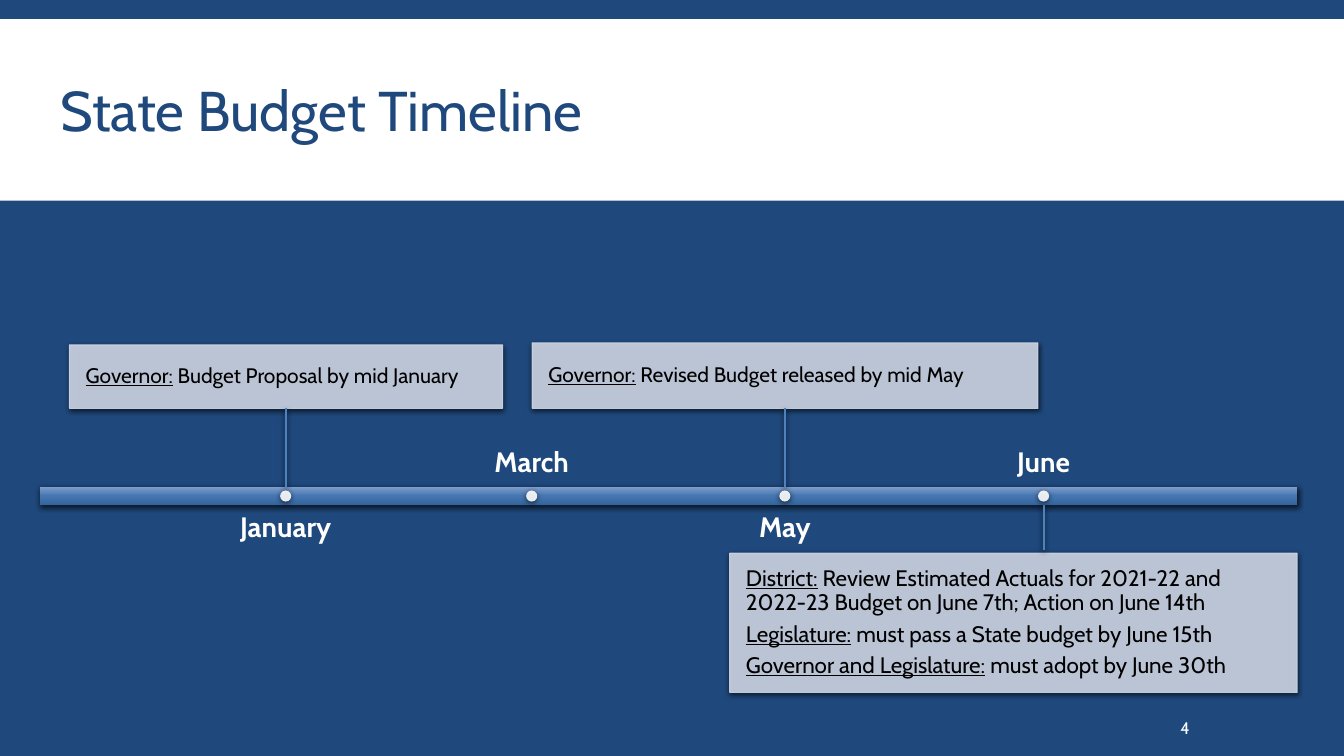
from copy import deepcopy

from lxml import etree
from pptx import Presentation
from pptx import util as u
from pptx.dml.color import RGBColor
from pptx.enum import shapes, text
from pptx.oxml.ns import qn

Cm, Pt = u.Cm, u.Pt
ANCHOR, ALIGN = text.MSO_ANCHOR, text.PP_ALIGN

NAVY = RGBColor(0x1F, 0x49, 0x7D)
WHITE = RGBColor(0xFF, 0xFF, 0xFF)
BLACK = RGBColor(0, 0, 0)
CARD = RGBColor(0xCF, 0xD7, 0xE7)
STEM = RGBColor(0x4F, 0x81, 0xBD)
BAR_COLORS = [RGBColor(0x7F, 0x9E, 0xCC), RGBColor(0x45, 0x76, 0xB1),
              RGBColor(0x34, 0x65, 0x9D)]
FONT = "Cabin"

# Content: lengths in cm
TITLE = "State Budget Timeline"
PAGE = "4"
MONTHS = [  # name, centre x, label above the bar
    ("January", 7.2, False),
    ("March", 13.4, True),
    ("May", 19.78, False),
    ("June", 26.3, True),
]
CARDS = [  # month, left, top, width, height, text size, (who, what) lines
    ("January", 1.75, 8.69, 10.92, 1.6, 15,
     [("Governor:", " Budget Proposal by mid January")]),
    ("May", 13.41, 8.64, 12.75, 1.65, 15,
     [("Governor:", " Revised Budget released by mid May")]),
    ("June", 18.39, 13.94, 14.3, 3.51, 16,
     [("District:", " Review Estimated Actuals for 2021-22 and "
       "2022-23 Budget on June 7th; Action on June 14th"),
      ("Legislature:", " must pass a State budget by June 15th"),
      ("Governor and Legislature:", " must adopt by June 30th")]),
]
BAR_LEFT, BAR_MID, BAR_W, BAR_H = 1, 12.5, 31.7, 0.46
BAR_TOP, BAR_BOTTOM = BAR_MID - BAR_H / 2, BAR_MID + BAR_H / 2
DOT, LABEL_W, LABEL_H, LABEL_GAP = 0.28, 9.93, 1.3, 0.2
STEM_GAP = 0.07

prs = Presentation()
prs.slide_width, prs.slide_height = Cm(33.87), Cm(19.05)
s = prs.slides.add_slide(prs.slide_layouts[6])
s.background.fill.solid()
s.background.fill.fore_color.rgb = NAVY


def box(kind, left, top, width, height, color=None):
    sp = s.shapes.add_shape(kind, Cm(left), Cm(top), Cm(width), Cm(height))
    sp.shadow.inherit = False
    sp.line.fill.background()
    if color is not None:
        sp.fill.solid()
        sp.fill.fore_color.rgb = color
    return sp


def translucent(sp):
    for clr in sp._element.spPr.iter(qn("a:srgbClr")):
        etree.SubElement(clr, qn("a:alpha"), val="90000")


def add_shadow(sp):
    spPr = sp._element.spPr
    effects = spPr.find(qn("a:effectLst"))
    if effects is None:
        effects = etree.SubElement(spPr, qn("a:effectLst"))
    shadow = etree.SubElement(effects, qn("a:outerShdw"), blurRad=str(Pt(4)),
                              dist=str(Pt(1.2)), dir="5400000", rotWithShape="0")
    clr = etree.SubElement(shadow, qn("a:srgbClr"), val="000000")
    etree.SubElement(clr, qn("a:alpha"), val="68000")


def set_frame(sp, anchor, margin_x, margin_y):
    tf = sp.text_frame
    tf.word_wrap = True
    tf.vertical_anchor = anchor
    tf.margin_left = tf.margin_right = Cm(margin_x)
    tf.margin_top = tf.margin_bottom = Cm(margin_y)
    return tf


def add_run(p, words, size, color, **style):
    r = p.add_run()
    r.text = words
    r.font.name, r.font.size, r.font.color.rgb = FONT, Pt(size), color
    for name, value in style.items():
        setattr(r.font, name, value)


def label(words, left, top, width, height, size, color, anchor,
          margin_x=0.0, margin_y=0.0, align=ALIGN.LEFT, spacing=1.0, bold=False):
    sp = s.shapes.add_textbox(Cm(left), Cm(top), Cm(width), Cm(height))
    p = set_frame(sp, anchor, margin_x, margin_y).paragraphs[0]
    p.alignment, p.line_spacing = align, spacing
    add_run(p, words, size, color, bold=bold)


# Title band and page number
RECT, OVAL = shapes.MSO_SHAPE.RECTANGLE, shapes.MSO_SHAPE.OVAL
box(RECT, 0, 0.48, 33.87, 4.58, WHITE)
label(TITLE, 1.27, 0.79, 27.18, 4.19, 40, NAVY, ANCHOR.MIDDLE, 0.25, 0.13,
      spacing=0.85)
label(PAGE, 29.62, 17.83, 2.62, 1.02, 12, WHITE, ANCHOR.MIDDLE, 0.13, 0.13)

# Timeline bar with a three-stop gradient
bar = box(RECT, BAR_LEFT, BAR_TOP, BAR_W, BAR_H)
bar.fill.gradient()
bar.fill.gradient_angle = 270
first_stop = bar._element.spPr.find(".//" + qn("a:gs"))
first_stop.addnext(deepcopy(first_stop))
for i, stop in enumerate(bar.fill.gradient_stops):
    stop.position = i / 2
    stop.color.rgb = BAR_COLORS[i]
add_shadow(bar)

# Cards and their stems
centres = {name: x for name, x, above in MONTHS}
for month, left, top, width, height, size, lines in CARDS:
    card = box(RECT, left, top, width, height, CARD)
    card.line.color.rgb = CARD
    card.line.width = Pt(0.75)
    translucent(card)
    add_shadow(card)
    tf = set_frame(card, ANCHOR.MIDDLE, 0.41, 0)
    for i, (who, what) in enumerate(lines):
        p = tf.add_paragraph() if i else tf.paragraphs[0]
        p.alignment, p.line_spacing = ALIGN.LEFT, 0.9
        p.space_before = Pt(5.2 if i else 0)
        add_run(p, who, size, BLACK, underline=True)
        add_run(p, what, size, BLACK)

    if top < BAR_MID:
        start, end = top + height, BAR_TOP
    else:
        start, end = BAR_BOTTOM, top - STEM_GAP
    x = Cm(centres[month])
    stem = s.shapes.add_connector(shapes.MSO_CONNECTOR.STRAIGHT,
                                  x, Cm(start), x, Cm(end))
    stem.line.color.rgb = STEM
    stem.line.width = Pt(1.5)
    add_shadow(stem)

# Month labels and dots
for name, x, above in MONTHS:
    top = BAR_TOP - LABEL_GAP - LABEL_H if above else BAR_BOTTOM + LABEL_GAP
    label(name, x - LABEL_W / 2, top, LABEL_W, LABEL_H, 20, WHITE,
          ANCHOR.BOTTOM if above else ANCHOR.TOP,
          align=ALIGN.CENTER, spacing=0.9, bold=True)
    dot = box(OVAL, x - DOT / 2, BAR_MID - DOT / 2, DOT, DOT, WHITE)
    translucent(dot)
    add_shadow(dot)

prs.save("out.pptx")
